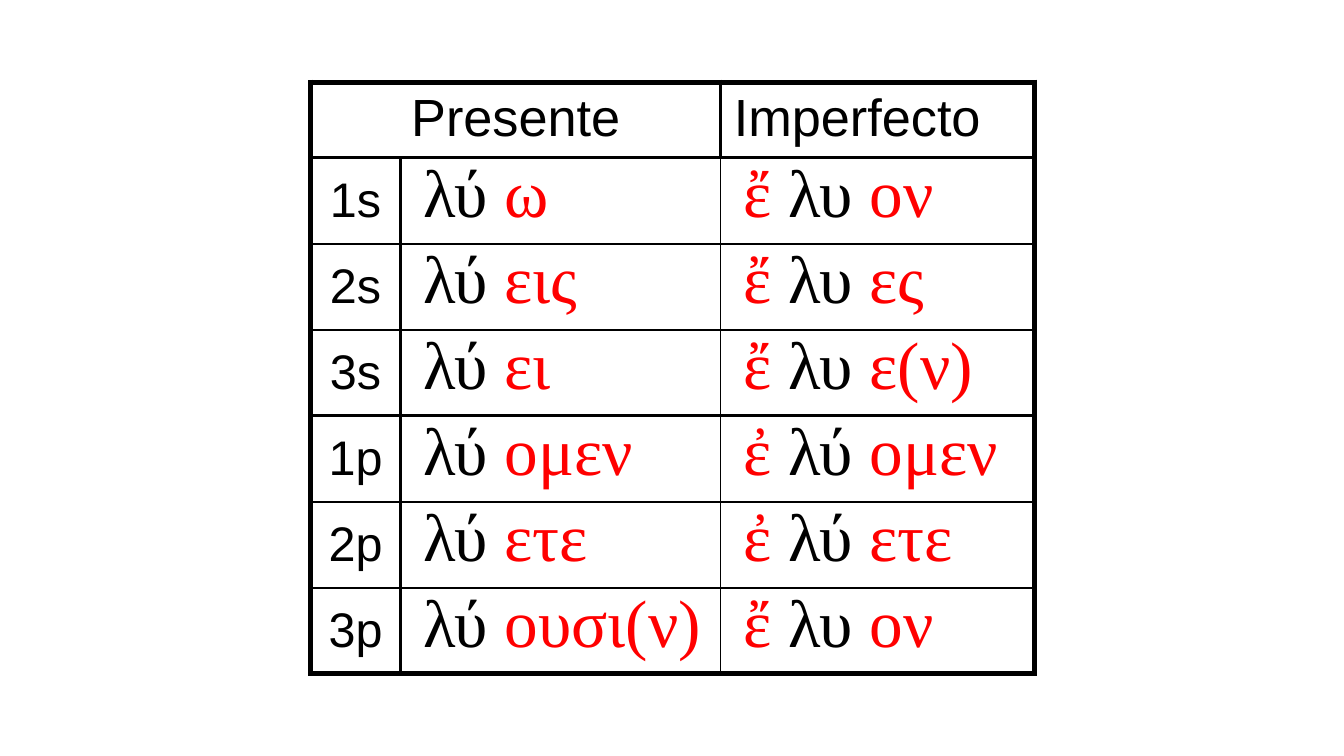
import pptx
import pptx.dml.color
import pptx.enum.text
import pptx.oxml
import pptx.oxml.ns
import pptx.util

Pt = pptx.util.Pt
ALIGN = pptx.enum.text.PP_ALIGN
ANCHOR = pptx.enum.text.MSO_ANCHOR

COLORS = {"stem": "000000", "affix": "FF0000", "border": "000000"}

HEADINGS = {0: "Presente", 2: "Imperfecto"}
CONJUGATION = [
    ("1s", ("λύ ", "ω"), ("ἔ ", "λυ ", "ον")),
    ("2s", ("λύ ", "εις"), ("ἔ ", "λυ ", "ες")),
    ("3s", ("λύ ", "ει"), ("ἔ ", "λυ ", "ε(ν)")),
    ("1p", ("λύ ", "ομεν"), ("ἐ ", "λύ ", "ομεν")),
    ("2p", ("λύ ", "ετε"), ("ἐ ", "λύ ", "ετε")),
    ("3p", ("λύ ", "ουσι(ν)"), ("ἔ ", "λυ ", "ον")),
]
PRESENT_ROLES = ("stem", "affix")
IMPERFECT_ROLES = ("affix", "stem", "affix")

LEFT, TOP = 166.5, 44
COLUMN_WIDTHS = [48, 171.5, 168]
ROW_HEIGHTS = [40.5] + [46.1] * len(CONJUGATION)
HORIZONTAL_RULES = [3, 2, 1, 1, 2, 1, 1, 3]
VERTICAL_RULES = [3, 2, 1, 3]
HEADING_RULES = [3, 1.5, 1.5, 3]


def write(cell, spans, font, size, align=ALIGN.LEFT, margin=0, indent=0):
    para = cell.text_frame.paragraphs[0]
    para.alignment = align
    para.font.name = font
    para.font.size = Pt(size)
    properties = para._p.get_or_add_pPr()
    properties.set("marL", str(Pt(margin)))
    properties.set("indent", str(Pt(indent)))
    for text, role in spans:
        span = para.add_run()
        span.text = text
        span.font.color.rgb = pptx.dml.color.RGBColor.from_string(COLORS[role])


def write_label(cell, text, size, centered=True):
    if centered:
        write(cell, [(text, "stem")], "Arial", size, ALIGN.CENTER, 27, -27)
    else:
        write(cell, [(text, "stem")], "Arial", size)


def write_form(cell, parts, roles):
    write(cell, zip(parts, roles), "Times New Roman", 36, indent=7.2)


def draw_borders(cell, row, column):
    verticals = VERTICAL_RULES if row else HEADING_RULES
    sides = {
        "L": verticals[column],
        "R": verticals[column + 1],
        "T": HORIZONTAL_RULES[row],
        "B": HORIZONTAL_RULES[row + 1],
    }
    for side, width in sides.items():
        cell._tc.get_or_add_tcPr().append(pptx.oxml.parse_xml(
            f'<a:ln{side} {pptx.oxml.ns.nsdecls("a")} w="{Pt(width)}">'
            f'<a:solidFill><a:srgbClr val="{COLORS["border"]}"/></a:solidFill>'
            f'</a:ln{side}>'))


def set_margins(cell, across, down):
    cell.margin_left = cell.margin_right = Pt(across)
    cell.margin_top = cell.margin_bottom = Pt(down)


def main():
    deck = pptx.Presentation()
    deck.slide_width, deck.slide_height = Pt(720), Pt(405)
    page = deck.slides.add_slide(deck.slide_layouts[6])
    table = page.shapes.add_table(
        len(ROW_HEIGHTS), len(COLUMN_WIDTHS), Pt(LEFT), Pt(TOP),
        Pt(sum(COLUMN_WIDTHS)), Pt(sum(ROW_HEIGHTS))).table
    table.first_row = table.horz_banding = False
    for column, width in zip(table.columns, COLUMN_WIDTHS):
        column.width = Pt(width)
    for row, height in zip(table.rows, ROW_HEIGHTS):
        row.height = Pt(height)

    for row in range(len(ROW_HEIGHTS)):
        for column in range(len(COLUMN_WIDTHS)):
            cell = table.cell(row, column)
            is_form = row > 0 and column > 0
            set_margins(cell, *((5, 0) if is_form else (7.2, 3.6)))
            draw_borders(cell, row, column)
            cell.fill.background()

    table.cell(0, 0).merge(table.cell(0, 1))
    for column, heading in HEADINGS.items():
        write_label(table.cell(0, column), heading, 28, centered=column == 0)
    for row, (person, present, imperfect) in enumerate(CONJUGATION, 1):
        write_label(table.cell(row, 0), person, 26)
        table.cell(row, 0).vertical_anchor = ANCHOR.MIDDLE
        write_form(table.cell(row, 1), present, PRESENT_ROLES)
        write_form(table.cell(row, 2), imperfect, IMPERFECT_ROLES)

    deck.save("out.pptx")


if __name__ == "__main__":
    main()
